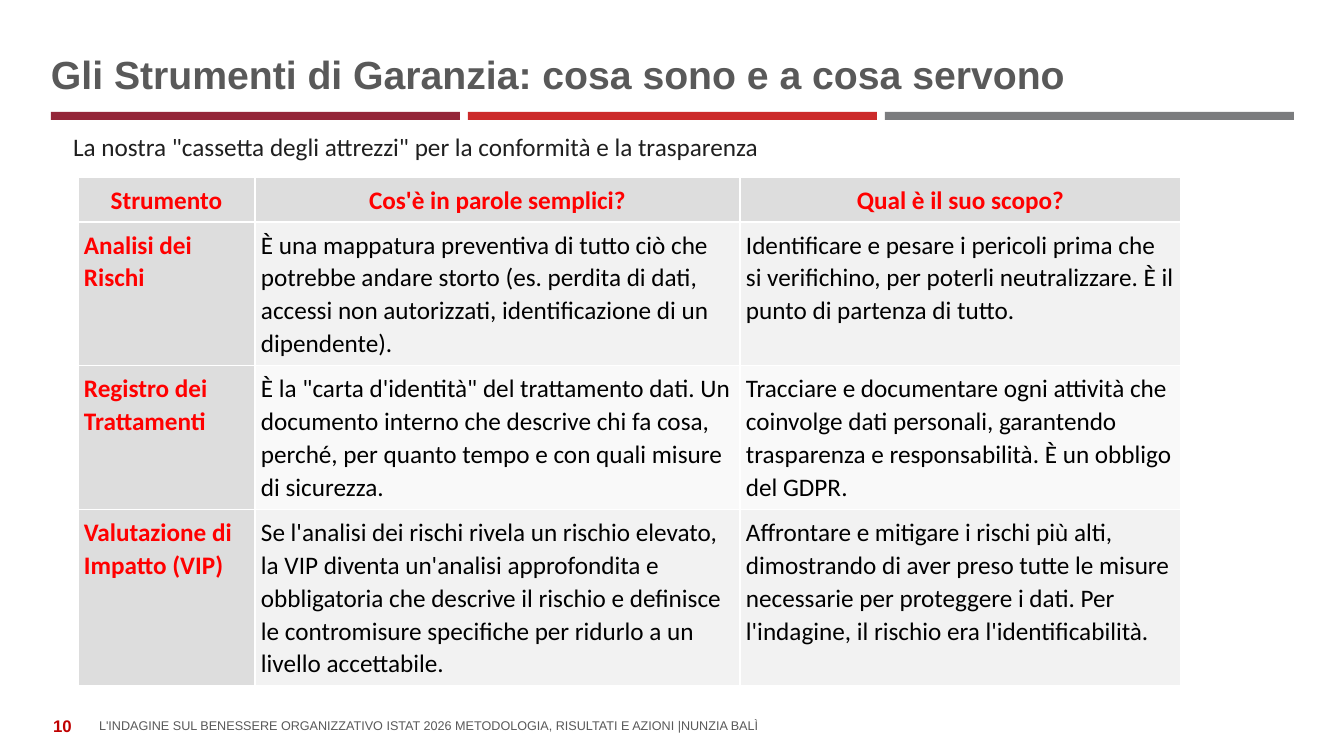
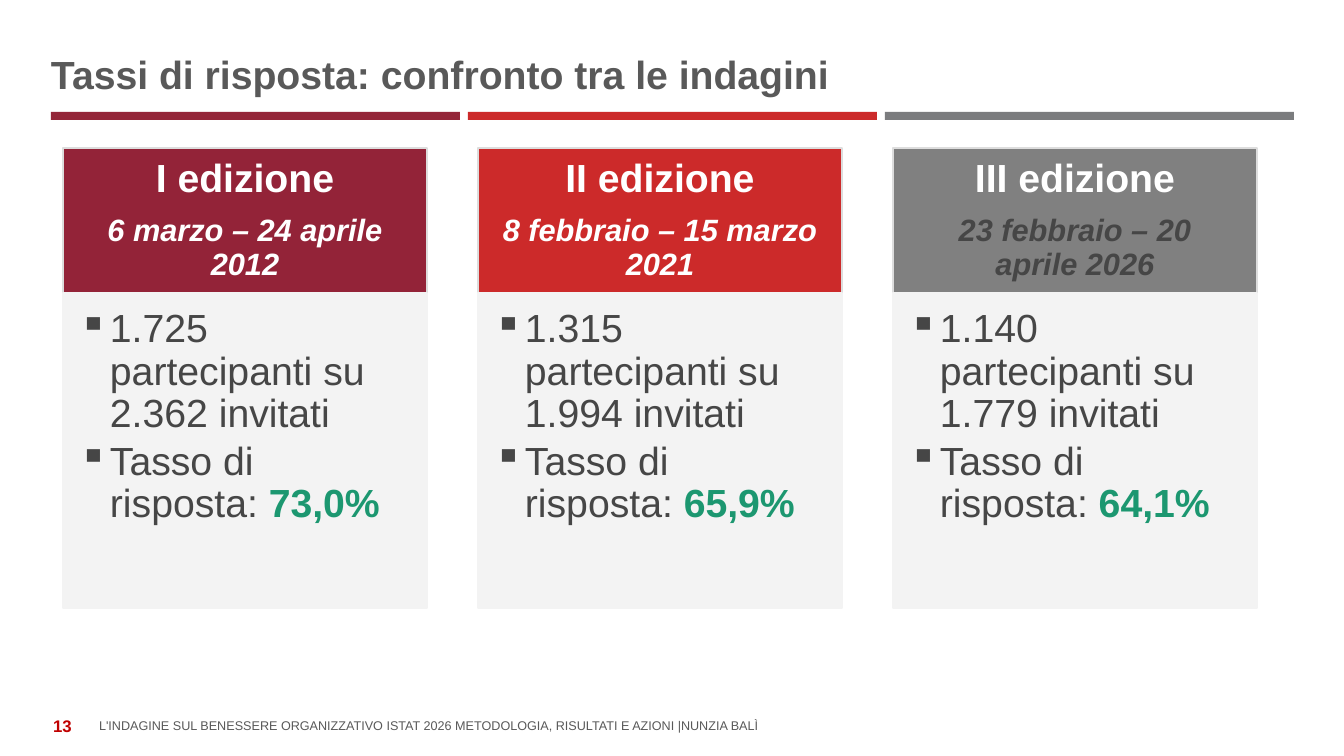
from lxml.etree import SubElement
from pptx import Presentation
from pptx.dml.color import RGBColor
from pptx.enum.shapes import MSO_SHAPE
from pptx.enum.text import MSO_ANCHOR, MSO_AUTO_SIZE, PP_ALIGN
from pptx.oxml.ns import qn
from pptx.util import Emu, Pt

TITLE_ONLY = 5
BURGUNDY, RED, GREY = "942639", "CC2A2A", "7B7C7E"
INK, DARK, WHITE, GREEN = "595959", "464646", "FFFFFF", "1C9770"
HEADER_FILL, PANEL_FILL, LIGHT_FILL = "DDDDDD", "F2F2F2", "F9F9F9"
FOOTER = ("L'INDAGINE SUL BENESSERE ORGANIZZATIVO ISTAT 2026 "
          "METODOLOGIA, RISULTATI E AZIONI |NUNZIA BALÌ")

TOOLS = [
    ("Strumento", "Cos'è in parole semplici?", "Qual è il suo scopo?"),
    ("Analisi dei Rischi",
     "È una mappatura preventiva di tutto ciò che potrebbe andare storto (es. perdita di dati, "
     "accessi non autorizzati, identificazione di un dipendente).",
     "Identificare e pesare i pericoli prima che si verifichino, per poterli neutralizzare. "
     "È il punto di partenza di tutto."),
    ("Registro dei Trattamenti",
     "È la \"carta d'identità\" del trattamento dati. Un documento interno che descrive chi fa "
     "cosa, perché, per quanto tempo e con quali misure di sicurezza.",
     "Tracciare e documentare ogni attività che coinvolge dati personali, garantendo trasparenza "
     "e responsabilità. È un obbligo del GDPR."),
    ("Valutazione di Impatto (VIP)",
     "Se l'analisi dei rischi rivela un rischio elevato, la VIP diventa un'analisi approfondita e "
     "obbligatoria che descrive il rischio e definisce le contromisure specifiche per ridurlo a "
     "un livello accettabile.",
     "Affrontare e mitigare i rischi più alti, dimostrando di aver preso tutte le misure "
     "necessarie per proteggere i dati. Per l'indagine, il rischio era l'identificabilità."),
]

EDITIONS = [
    ("I edizione", "6 marzo – 24 aprile 2012", "932338", WHITE, "1.725", "2.362", "73,0%"),
    ("II edizione", "8 febbraio – 15 marzo 2021", RED, WHITE, "1.315", "1.994", "65,9%"),
    ("III edizione", "23 febbraio – 20 aprile 2026", "808080", DARK, "1.140", "1.779", "64,1%"),
]


def px(length):
    return Emu(round(length * 914400 / 100.8))


def color(value):
    return RGBColor.from_string(value)


class Deck:
    def __init__(self):
        self.presentation = Presentation()
        self.presentation.slide_width = px(1344)
        self.presentation.slide_height = px(756)
        self.page = None

    def add_page(self, title, number):
        layout = self.presentation.slide_layouts[TITLE_ONLY]
        self.page = self.presentation.slides.add_slide(layout)
        self.title(title)
        for index, fill in enumerate((BURGUNDY, RED, GREY)):
            self.box(51 + index * 417, 112, 409, 8, fill)
        self.text(str(number), 35, 706, 55, 40, 12, "C00000", bold=True,
                  align=PP_ALIGN.CENTER, anchor=MSO_ANCHOR.MIDDLE)
        self.text(FOOTER, 99, 705, 1002, 28, 9, INK,
                  insets=(0, 0, 0, 0), anchor=MSO_ANCHOR.BOTTOM)

    def frame(self, shape, insets, anchor):
        frame = shape.text_frame
        frame.word_wrap = True
        frame.auto_size = MSO_AUTO_SIZE.NONE
        frame.vertical_anchor = anchor
        (frame.margin_left, frame.margin_top,
         frame.margin_right, frame.margin_bottom) = map(px, insets)
        return frame

    def style(self, para, size, ink, name="Arial", bold=False, italic=False,
              align=PP_ALIGN.LEFT, spacing=None, after=0):
        para.alignment = align
        para.line_spacing = spacing
        para.space_after = Pt(after)
        font = para.font
        font.name, font.size = name, Pt(size)
        font.bold, font.italic = bold, italic
        font.color.rgb = color(ink)

    def title(self, text):
        shape = self.page.shapes.title
        shape.left, shape.top, shape.width, shape.height = map(px, (51, 55, 1242, 42))
        para = self.frame(shape, (0, 0, 0, 0), MSO_ANCHOR.BOTTOM).paragraphs[0]
        para.text = text
        self.style(para, 28, INK, bold=True, spacing=Pt(30))

    def text(self, text, left, top, width, height, size, ink,
             insets=(10, 5, 10, 5), anchor=MSO_ANCHOR.TOP, **look):
        shape = self.page.shapes.add_textbox(*map(px, (left, top, width, height)))
        para = self.frame(shape, insets, anchor).paragraphs[0]
        para.text = text
        self.style(para, size, ink, **look)

    def box(self, left, top, width, height, fill, line=None):
        shape = self.page.shapes.add_shape(
            MSO_SHAPE.RECTANGLE, *map(px, (left, top, width, height)))
        shape.shadow.inherit = False
        shape.fill.solid()
        shape.fill.fore_color.rgb = color(fill)
        if line:
            shape.line.color.rgb = color(line)
            shape.line.width = Pt(1.75)
        else:
            shape.line.fill.background()
        return shape

    def bullet(self, para):
        properties = para._p.get_or_add_pPr()
        properties.set("marL", str(px(31)))
        properties.set("indent", str(px(-31)))
        SubElement(properties, qn("a:buChar")).set("char", "▪")

    def card(self, left, heading, dates, fill, dates_ink, answered, invited, rate):
        top, width, header_height = 148, 364, 145
        header = self.box(left, top, width, header_height, fill, HEADER_FILL)
        frame = self.frame(header, (22, 12, 22, 12), MSO_ANCHOR.MIDDLE)
        centred = dict(bold=True, align=PP_ALIGN.CENTER, spacing=0.9)
        para = frame.paragraphs[0]
        para.text = heading
        self.style(para, 28, WHITE, after=10, **centred)
        para = frame.add_paragraph()
        para.text = dates
        self.style(para, 22, dates_ink, italic=True, **centred)

        panel = self.box(left, top + header_height, width, 315, "F3F3F3", "F3F3F3")
        frame = self.frame(panel, (16, 16, 22, 24), MSO_ANCHOR.TOP)
        people, share = frame.paragraphs[0], frame.add_paragraph()
        people.text = f"{answered} partecipanti su {invited} invitati"
        share.text = "Tasso di risposta: "
        span = share.add_run()
        span.text = rate
        span.font.bold = True
        span.font.color.rgb = color(GREEN)
        for para in (people, share):
            self.bullet(para)
            self.style(para, 28, DARK, spacing=0.9, after=4)

    def table(self, left, top, widths, heights, rows):
        area = map(px, (left, top, sum(widths), sum(heights)))
        table = self.page.shapes.add_table(len(rows), len(widths), *area).table
        table.horz_banding = False
        for column, width in zip(table.columns, widths):
            column.width = px(width)
        for row, height in zip(table.rows, heights):
            row.height = px(height)
        for row_index, row in enumerate(rows):
            for column_index, text in enumerate(row):
                is_header = row_index == 0
                is_label = is_header or column_index == 0
                cell = table.cell(row_index, column_index)
                cell.margin_left = cell.margin_right = px(6)
                cell.margin_top = cell.margin_bottom = px(6)
                body_fill = PANEL_FILL if row_index % 2 else LIGHT_FILL
                cell.fill.solid()
                cell.fill.fore_color.rgb = color(HEADER_FILL if is_label else body_fill)
                para = cell.text_frame.paragraphs[0]
                para.text = text
                self.style(para, 18, "FF0000" if is_label else "000000", "Calibri",
                           bold=is_label, spacing=1.07, after=8,
                           align=PP_ALIGN.CENTER if is_header else PP_ALIGN.LEFT)
        last = len(rows) - 1
        for column_index in range(1, len(widths)):
            table.cell(last, column_index).fill.fore_color.rgb = color(PANEL_FILL)


def main():
    deck = Deck()
    deck.add_page("Gli Strumenti di Garanzia: cosa sono e a cosa servono", 10)
    deck.text("La nostra \"cassetta degli attrezzi\" per la conformità e la trasparenza",
              63, 126, 1204, 40, 18, "1F1F1F", name="Calibri")
    deck.table(78, 177, (177, 485, 441), (43, 141, 141, 172), TOOLS)

    deck.add_page("Tassi di risposta: confronto tra le indagini", 13)
    for index, edition in enumerate(EDITIONS):
        deck.card(63 + index * 415, *edition)
    deck.presentation.save("out.pptx")


if __name__ == "__main__":
    main()
